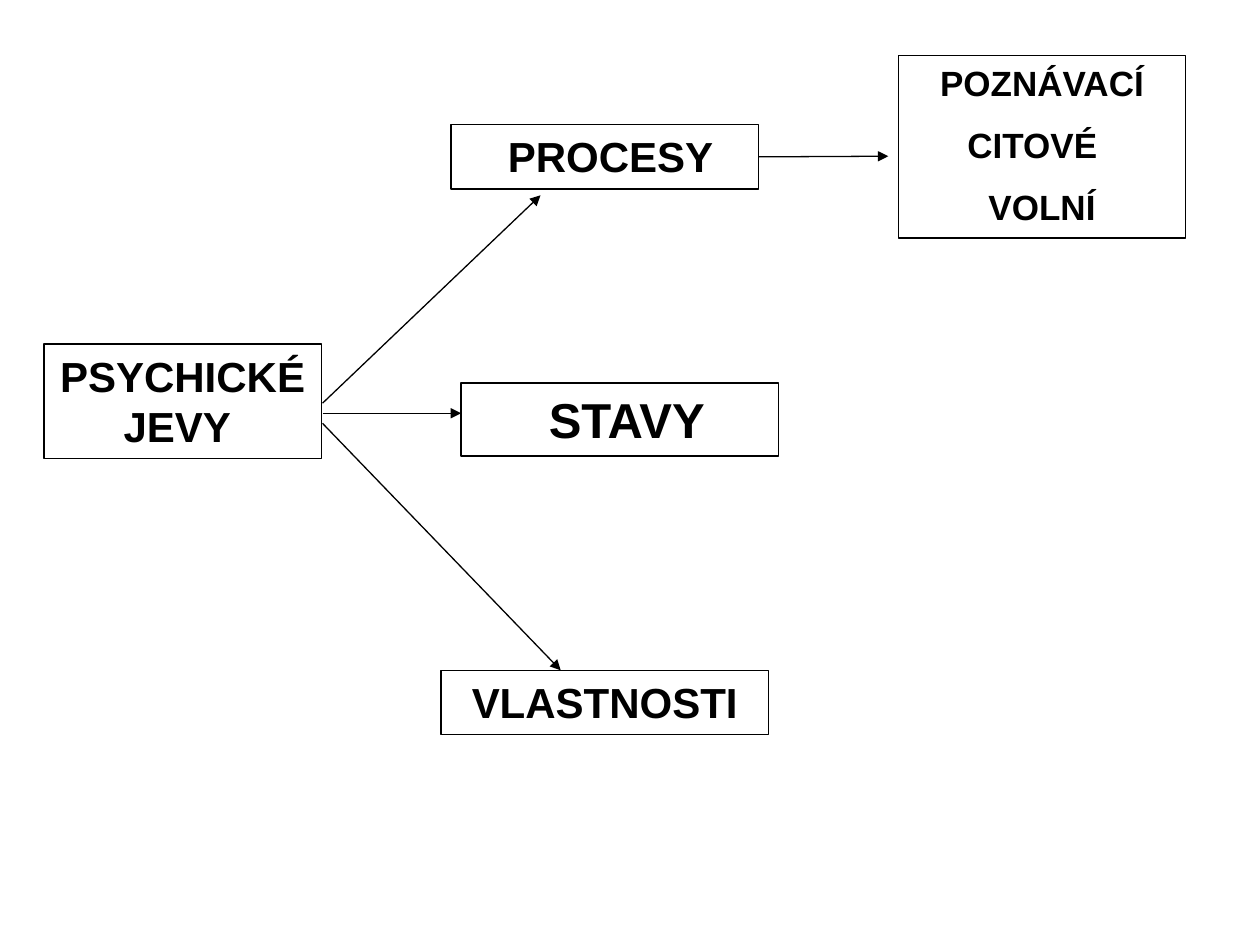
from dataclasses import dataclass

from lxml import etree
from pptx import Presentation
from pptx import util as u
from pptx.dml.color import RGBColor
from pptx.enum import shapes, text
from pptx.oxml import ns


@dataclass(frozen=True)
class Theme:
    ink: RGBColor = RGBColor(0, 0, 0)
    font: str = "Arial"
    small: int = 20
    normal: int = 24
    large: int = 28
    line_width: float = 0.75
    # Half of a text line, as a share of the type size
    paragraph_gap: float = 0.57


class Diagram:
    def __init__(self, slide, theme):
        self.slide = slide
        self.theme = theme

    def outline(self, line):
        line.color.rgb = self.theme.ink
        line.width = u.Pt(self.theme.line_width)

    def box(self, left, top, width, height, lines, size):
        """Draw an outlined box; each item of lines is a paragraph, \\v breaks a line."""
        shape = self.slide.shapes.add_shape(
            shapes.MSO_SHAPE.RECTANGLE, *map(u.Inches, (left, top, width, height)))
        shape.shadow.inherit = False
        shape.fill.background()
        self.outline(shape.line)

        frame = shape.text_frame
        frame_format = {
            "word_wrap": True,
            "vertical_anchor": text.MSO_ANCHOR.TOP,
            "auto_size": text.MSO_AUTO_SIZE.SHAPE_TO_FIT_TEXT,
        }
        for name, value in frame_format.items():
            setattr(frame, name, value)

        font_format = {"name": self.theme.font, "size": u.Pt(size), "bold": True}
        for index, line in enumerate(lines):
            paragraph = frame.paragraphs[0] if index == 0 else frame.add_paragraph()
            paragraph.text = line
            paragraph.alignment = text.PP_ALIGN.CENTER
            if index:
                paragraph.space_before = u.Pt(size * self.theme.paragraph_gap)
            for run in paragraph.runs:
                for name, value in font_format.items():
                    setattr(run.font, name, value)
                run.font.color.rgb = self.theme.ink
        return shape

    def arrow(self, start, end):
        connector = self.slide.shapes.add_connector(
            shapes.MSO_CONNECTOR.STRAIGHT, *map(u.Inches, start + end))
        self.outline(connector.line)
        etree.SubElement(connector.line._get_or_add_ln(), ns.qn("a:tailEnd"), type="triangle")
        etree.SubElement(connector._element.spPr, ns.qn("a:effectLst"))
        return connector


def main():
    deck = Presentation()
    deck.slide_width, deck.slide_height = u.Inches(10), u.Inches(7.5)
    theme = Theme()
    diagram = Diagram(deck.slides.add_slide(deck.slide_layouts[6]), theme)

    diagram.box(0.35, 2.73, 2.2, 0.91, ["PSYCHICKÉ\vJEVY "], theme.normal)
    processes = diagram.box(3.58, 0.99, 2.44, 0.51, [" PROCESY"], theme.normal)
    diagram.box(3.66, 3.04, 2.52, 0.58, [" STAVY"], theme.large)
    diagram.box(3.5, 5.32, 2.6, 0.51, ["VLASTNOSTI"], theme.normal)
    diagram.box(7.13, 0.44, 2.28, 1.45, ["POZNÁVACÍ", "CITOVÉ  ", "VOLNÍ"], theme.small)

    phenomena_right = 2.56
    for start_y, end in ((3.2, (4.29, 1.55)), (3.36, (4.45, 5.32)), (3.28, (3.66, 3.28))):
        diagram.arrow((phenomena_right, start_y), end)

    process_kinds = diagram.arrow((6.02, 1.24), (7.05, 1.24))
    process_kinds.begin_connect(processes, 3)

    deck.save("out.pptx")


if __name__ == "__main__":
    main()
